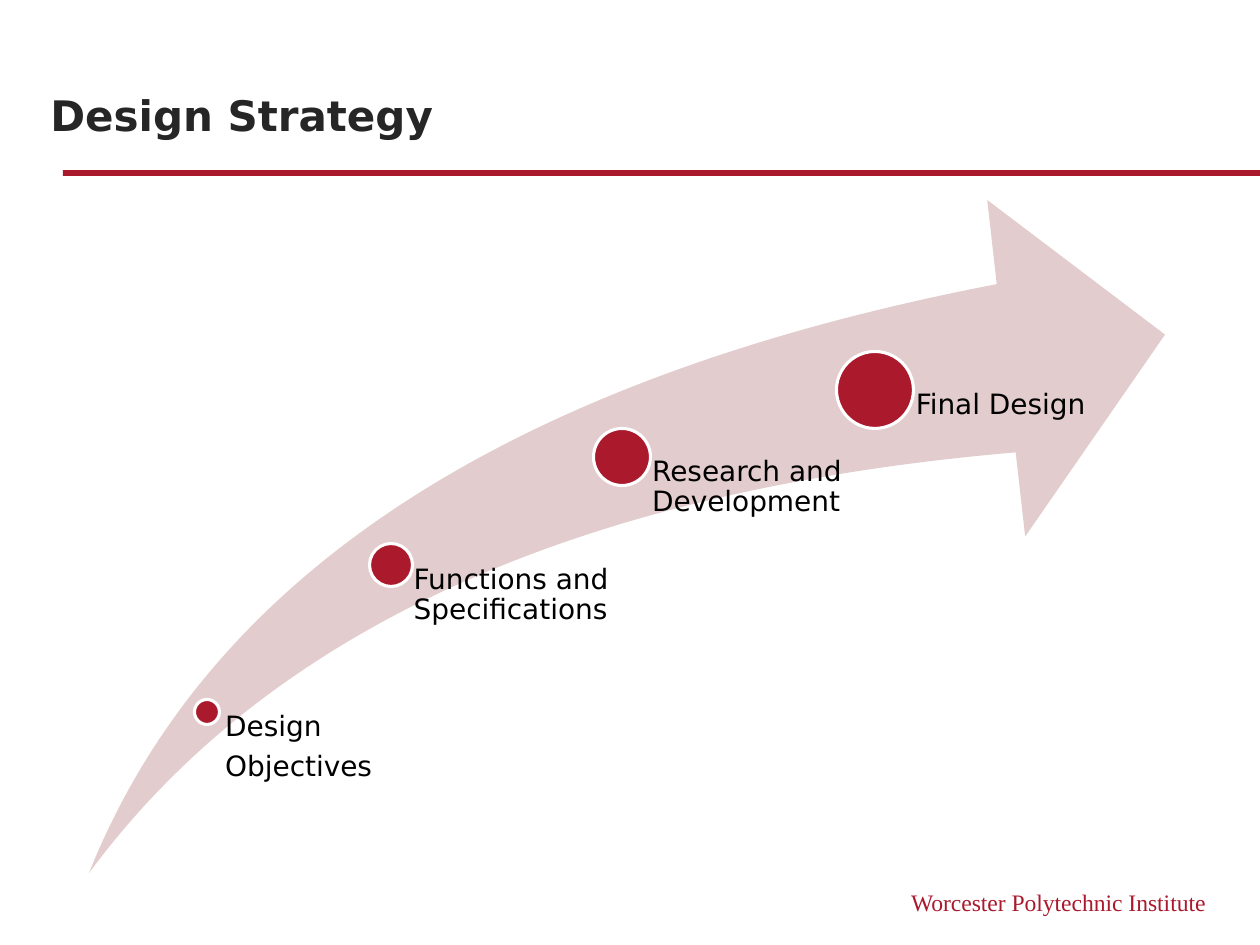
from pptx import Presentation
from pptx import util as u
from pptx.dml.color import RGBColor
from pptx.enum import shapes, text

SCALE = 914400 / 126
RED = RGBColor(0xAB, 0x19, 0x2D)
PINK = RGBColor(0xE2, 0xCC, 0xCD)
WHITE = RGBColor(0xFF, 0xFF, 0xFF)
BLACK = RGBColor(0, 0, 0)
DARK = RGBColor(0x26, 0x26, 0x26)
SANS = "DejaVu Sans"
KIND = shapes.MSO_SHAPE


def px(n):
    return u.Emu(round(n * SCALE))


def apply(target, values):
    for name, value in values.items():
        setattr(target, name, value)


def add_form(slide, kind, box, fill, edge=None):
    form = slide.shapes.add_shape(kind, *map(px, box))
    form.shadow.inherit = False
    form.fill.solid()
    form.fill.fore_color.rgb = fill
    if edge is None:
        form.line.fill.background()
    else:
        form.line.color.rgb = edge
        form.line.width = u.Pt(1.75)
    return form


def add_text(slide, box, lines, font, color, frame=None, para=None):
    body = slide.shapes.add_textbox(*map(px, box)).text_frame
    apply(body, {"word_wrap": True, **(frame or {})})
    body.text = "\n".join(lines)
    for item in body.paragraphs:
        apply(item, para or {})
        for run in item.runs:
            apply(run.font, font)
            run.font.color.rgb = color


# Title with the rule under it
def add_head(slide, box):
    left, top, width, height = box
    add_form(slide, KIND.RECTANGLE, (left + 25, top + 113, width - 25, 6), RED)
    add_text(slide, (left, top, 1023, height), ["Design Strategy"],
             {"name": SANS, "size": u.Pt(24), "bold": True}, DARK,
             {"vertical_anchor": text.MSO_ANCHOR.BOTTOM})


# School name at the bottom right
def add_foot(slide, box):
    add_text(slide, box, ["Worcester Polytechnic Institute"],
             {"name": "Times New Roman", "size": u.Pt(13.5)}, RED,
             para={"alignment": text.PP_ALIGN.RIGHT})


# Rising arrow with one dot and label for each step
def add_path(slide, box):
    left, top, width, height = box
    arrow = add_form(slide, KIND.SWOOSH_ARROW, box, PINK)
    for i in range(2):
        arrow.adjustments[i] = 0.25

    # Dot centre x and y, dot size, label shift and width, label lines
    steps = [
        (118, 512, 25, 5, 312, ["Design", "Objectives"]),
        (302, 365, 43, 0, 226, ["Functions and Specifications"]),
        (533, 257, 57, 0, 226, ["Research and Development"]),
        (786, 190, 77, 0, 226, ["Final Design"]),
    ]
    for x, y, size, shift, wide, lines in steps:
        spot = (left + x - size / 2, top + y - size / 2, size, size)
        add_form(slide, KIND.OVAL, spot, RED, WHITE)
        inset = size * 0.53
        add_text(slide, (left + x + shift, top + y, wide, height - y), lines,
                 {"name": SANS, "size": u.Pt(16)}, BLACK,
                 {"margin_left": px(inset), "margin_top": 0,
                  "margin_right": 0, "margin_bottom": 0},
                 {"line_spacing": 0.9, "space_after": u.Pt(5.6)})


def main():
    deck = Presentation()
    apply(deck, {"slide_width": px(1260), "slide_height": px(945)})
    slide = deck.slides.add_slide(deck.slide_layouts[6])
    add_head(slide, (38, 57, 1222, 89))
    add_path(slide, (89, 200, 1076, 673))
    add_foot(slide, (756, 882, 462, 42))
    deck.save("out.pptx")


if __name__ == "__main__":
    main()
